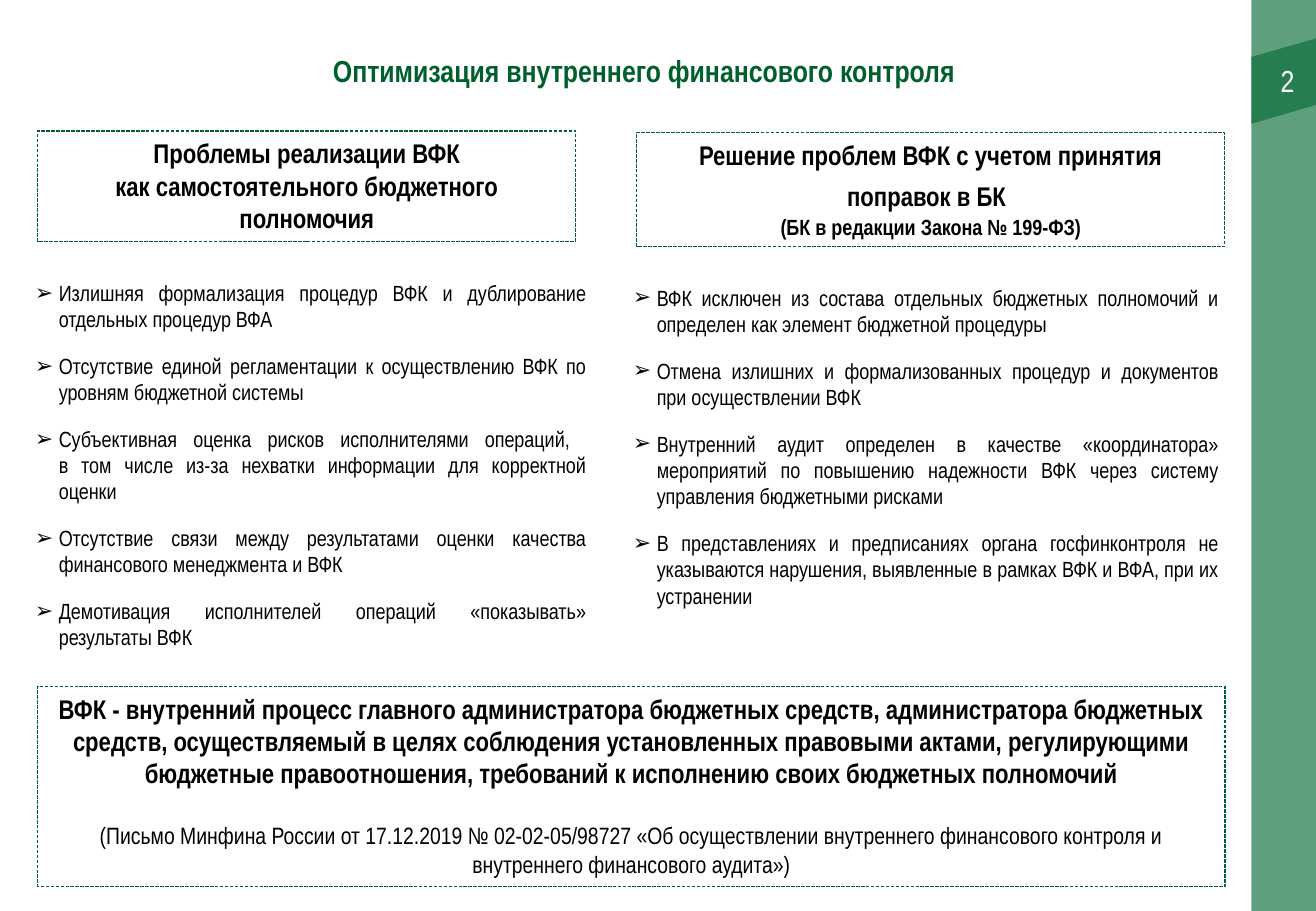
"""Build a slide on the reform of internal financial control."""
from lxml import etree
from pptx import Presentation, util as u
from pptx.dml.color import RGBColor
from pptx.enum import dml, shapes, text as t
from pptx.oxml.ns import qn

Cm, Pt = u.Cm, u.Pt
HUES = {"band": "066A36", "green": "00602B", "ink": "000000", "white": "FFFFFF"}
FONT = "Arial Narrow"
BAND_X, BAND_W, HIGH = 26.16, 1.4, 19.05
FLAG = [(0, 1.19), (BAND_W, 0.79), (BAND_W, 2.18), (0, 2.59)]

FLAWS = [
    "Излишняя формализация процедур ВФК и дублирование отдельных процедур ВФА",
    "Отсутствие единой регламентации к осуществлению ВФК по уровням бюджетной системы",
    "Субъективная оценка рисков исполнителями операций, \n"
    "в том числе из-за нехватки информации для корректной оценки",
    "Отсутствие связи между результатами оценки качества финансового менеджмента и ВФК",
    "Демотивация исполнителей операций «показывать» результаты ВФК",
]
FIXES = [
    "ВФК исключен из состава отдельных бюджетных полномочий и определен "
    "как элемент бюджетной процедуры",
    "Отмена излишних и формализованных процедур и документов при осуществлении ВФК",
    "Внутренний аудит определен в качестве «координатора» мероприятий по повышению "
    "надежности ВФК через систему управления бюджетными рисками",
    "В представлениях и предписаниях органа госфинконтроля не указываются нарушения, "
    "выявленные в рамках ВФК и ВФА, при их устранении",
]
TERM = ("ВФК - внутренний процесс главного администратора бюджетных средств, "
        "администратора бюджетных средств, осуществляемый в целях соблюдения "
        "установленных правовыми актами, регулирующими бюджетные правоотношения, "
        "требований к исполнению своих бюджетных полномочий")
LETTER = ("(Письмо Минфина России от 17.12.2019 № 02-02-05/98727 «Об осуществлении "
          "внутреннего финансового контроля и внутреннего финансового аудита»)")


def hue(name):
    return RGBColor.from_string(HUES[name])


def write(par, words, size=16, bold=True, color="ink"):
    for i, line in enumerate(words.split("\n")):
        if i:
            par.add_line_break()
        if line:
            run = par.add_run()
            run.text = line
            font = run.font
            font.name, font.size, font.bold = FONT, Pt(size), bold
            font.color.rgb = hue(color)


def start(frame, align=t.PP_ALIGN.CENTER):
    frame.word_wrap = True
    par = frame.paragraphs[0]
    if par.runs:
        par = frame.add_paragraph()
    par.alignment = align
    return par


def area(slide, *place):
    return slide.shapes.add_textbox(*map(Cm, place)).text_frame


def tint(shape):
    shape.shadow.inherit = False
    shape.line.fill.background()
    shape.fill.solid()
    shape.fill.fore_color.rgb = hue("band")
    for node in shape.fill._xPr.iter(qn("a:srgbClr")):
        etree.SubElement(node, qn("a:alpha"), val="64000")


def band(slide):
    tint(slide.shapes.add_shape(shapes.MSO_SHAPE.RECTANGLE, Cm(BAND_X), 0,
                                Cm(BAND_W), Cm(HIGH)))
    pts = [(Cm(BAND_X + x), Cm(y)) for x, y in FLAG]
    pen = slide.shapes.build_freeform(*pts[0])
    pen.add_line_segments(pts[1:])
    tint(pen.convert_to_shape())


def frame(slide, *place):
    box = slide.shapes.add_shape(shapes.MSO_SHAPE.RECTANGLE, *map(Cm, place))
    box.shadow.inherit = False
    box.fill.background()
    box.line.color.rgb = hue("green")
    box.line.width = Pt(0.75)
    box.line.dash_style = dml.MSO_LINE.SQUARE_DOT
    box.text_frame.vertical_anchor = t.MSO_ANCHOR.TOP
    return box.text_frame


def points(slide, items, *place):
    body = area(slide, *place)
    for item in items:
        par = start(body, t.PP_ALIGN.JUSTIFY)
        par.space_after = Pt(12)
        props = par._p.get_or_add_pPr()
        props.set("marL", str(Cm(0.5)))
        props.set("indent", str(Cm(-0.5)))
        etree.SubElement(props, qn("a:buFont"), typeface="Arial")
        etree.SubElement(props, qn("a:buChar"), char="➢")
        write(par, item, size=13, bold=False)


def main():
    deck = Presentation()
    deck.slide_width, deck.slide_height = Cm(27.51), Cm(HIGH)
    slide = deck.slides.add_slide(deck.slide_layouts[6])
    band(slide)

    page = area(slide, 20.93, 1.17, 6.43, 1.02)
    page.vertical_anchor = t.MSO_ANCHOR.MIDDLE
    page.margin_left = page.margin_right = Cm(0.3)
    page.margin_top = page.margin_bottom = Cm(0.15)
    write(start(page, t.PP_ALIGN.RIGHT), "2", size=18, bold=False, color="white")

    title = start(area(slide, 3.28, 0.74, 20.37, 1.17))
    title.line_spacing = Pt(28)
    write(title, "Оптимизация внутреннего финансового контроля", size=18, color="green")

    write(start(frame(slide, 0.79, 2.74, 11.25, 2.31)),
          "Проблемы реализации ВФК\nкак самостоятельного бюджетного полномочия")
    head = start(frame(slide, 13.31, 2.77, 12.29, 2.39))
    write(head, "Решение проблем ВФК с учетом принятия поправок в БК")
    write(head, " \n", size=21)
    write(head, "(БК в редакции Закона № 199-ФЗ)", size=13)

    points(slide, FLAWS, 0.48, 5.72, 12.01, 8.08)
    points(slide, FIXES, 12.98, 5.82, 12.73, 7.09)

    foot = frame(slide, 0.79, 14.35, 24.82, 4.19)
    write(start(foot), TERM)
    note = start(foot)
    note.space_before = Pt(19)
    write(note, LETTER, size=14, bold=False)
    deck.save("out.pptx")


if __name__ == "__main__":
    main()
